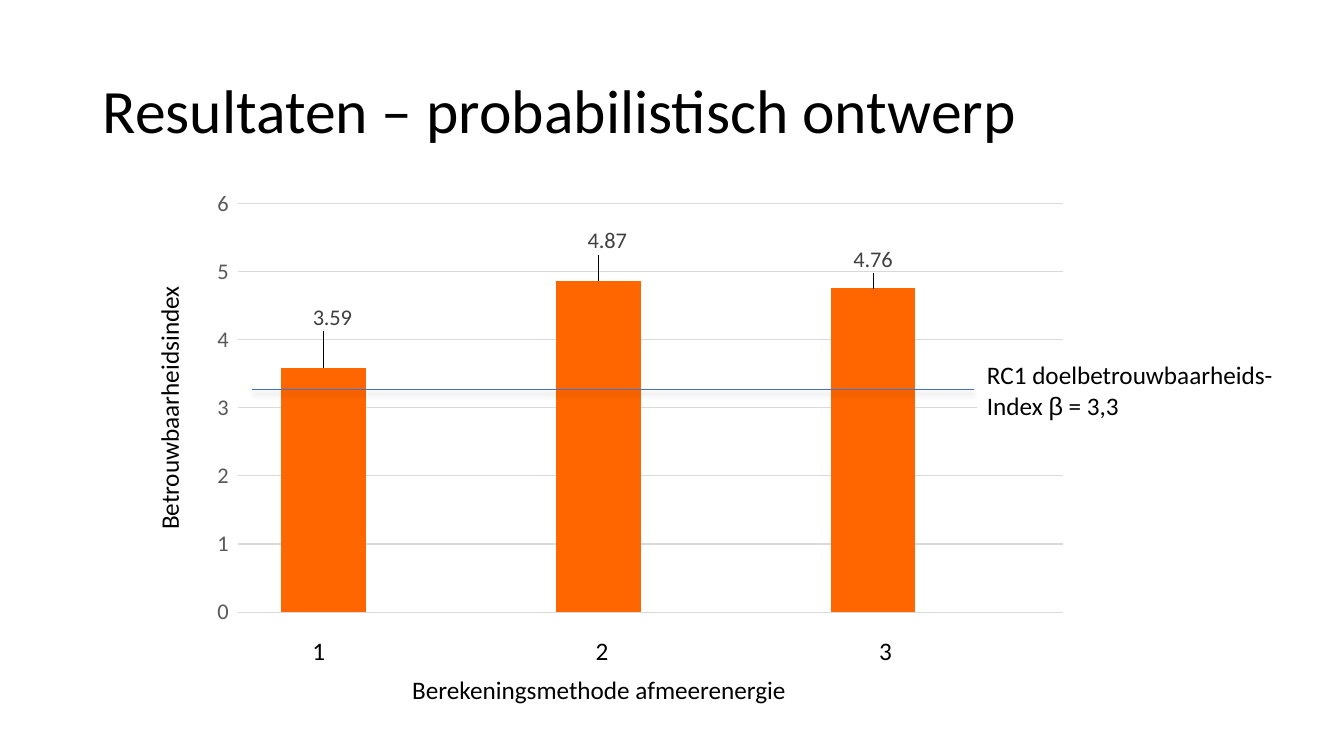
import pptx
import pptx.chart.data
import pptx.dml.color
import pptx.enum.chart
import pptx.enum.shapes
import pptx.enum.text
import pptx.oxml
import pptx.oxml.ns
import pptx.util

Inches = pptx.util.Inches
Pt = pptx.util.Pt
RGBColor = pptx.dml.color.RGBColor

BLACK = RGBColor(0x00, 0x00, 0x00)
WHITE = RGBColor(0xFF, 0xFF, 0xFF)
ORANGE = RGBColor(0xFF, 0x66, 0x00)
BLUE = RGBColor(0x44, 0x72, 0xC4)
GRID_GREY = RGBColor(0xD9, 0xD9, 0xD9)
AXIS_GREY = RGBColor(0x59, 0x59, 0x59)
LABEL_GREY = RGBColor(0x40, 0x40, 0x40)
FONT = "Calibri"

CATEGORIES = ["1", "2", "3"]
INDEXES = [3.59, 4.87, 4.76]
LABEL_SHIFTS = [(0.01, -0.06), (0.01, -0.04), (0.0, -0.02)]


def format_font(font, size, color, name=FONT):
    font.size = Pt(size)
    font.name = name
    font.color.rgb = color


def add_text(slide, paragraphs, left, top, width, height, size=18, color=BLACK,
             wrap=False, anchor=pptx.enum.text.MSO_ANCHOR.TOP, spacing=None,
             rotation=0, fill=None):
    shape = slide.shapes.add_textbox(Inches(left), Inches(top), Inches(width), Inches(height))
    shape.rotation = rotation
    if fill is not None:
        shape.fill.solid()
        shape.fill.fore_color.rgb = fill
    frame = shape.text_frame
    frame.word_wrap = wrap
    frame.vertical_anchor = anchor
    if not wrap:
        frame.auto_size = pptx.enum.text.MSO_AUTO_SIZE.SHAPE_TO_FIT_TEXT
    for number, runs in enumerate(paragraphs):
        paragraph = frame.add_paragraph() if number else frame.paragraphs[0]
        if spacing:
            paragraph.line_spacing = spacing
        for text, font_name in runs:
            run = paragraph.add_run()
            run.text = text
            format_font(run.font, size, color, font_name)
    return shape


def make_layout(**values):
    parts = "".join(f'<c:{name} val="{value}"/>' for name, value in values.items())
    return pptx.oxml.parse_xml(
        f'<c:layout {pptx.oxml.ns.nsdecls("c")}><c:manualLayout>{parts}'
        '</c:manualLayout></c:layout>')


def add_title(slide, left, top, width, height):
    add_text(slide, [[("Resultaten – probabilistisch ontwerp", FONT)]],
             left, top, width, height, size=44, wrap=True, spacing=0.9,
             anchor=pptx.enum.text.MSO_ANCHOR.MIDDLE)


def add_index_chart(slide, left, top, width, height):
    data = pptx.chart.data.CategoryChartData()
    data.categories = CATEGORIES
    data.add_series("Series 1", INDEXES)
    data.add_series("Series 2", [None] * len(CATEGORIES))
    chart = slide.shapes.add_chart(
        pptx.enum.chart.XL_CHART_TYPE.COLUMN_CLUSTERED,
        Inches(left), Inches(top), Inches(width), Inches(height), data).chart
    chart.has_legend = False
    chart.has_title = False
    format_font(chart.font, 16, BLACK)

    plot_area = chart.plots[0]._element.getparent()
    for layout in plot_area.xpath("./c:layout"):
        plot_area.remove(layout)
    plot_area.insert(0, make_layout(layoutTarget="inner", xMode="edge", yMode="edge",
                                    x=0.086, y=0.032, w=0.897, h=0.753))

    chart.category_axis.visible = False
    axis = chart.value_axis
    axis.minimum_scale = 0
    axis.maximum_scale = 6
    axis.major_unit = 1
    axis.format.line.fill.background()
    axis.major_gridlines.format.line.color.rgb = GRID_GREY
    axis.major_gridlines.format.line.width = Pt(0.75)
    format_font(axis.tick_labels.font, 16, AXIS_GREY)

    plot = chart.plots[0]
    plot.vary_by_categories = False
    plot.gap_width = 100
    plot.overlap = -24
    for series in plot.series:
        series.format.fill.solid()
        series.format.fill.fore_color.rgb = ORANGE
        series.data_labels.show_value = True
        format_font(series.data_labels.font, 16, LABEL_GREY)

    bars = plot.series[0]
    for number in range(len(INDEXES)):
        label = bars.points[number].data_label
        format_font(label.font, 16, LABEL_GREY)
        label.position = pptx.enum.chart.XL_LABEL_POSITION.OUTSIDE_END
    for element, (x, y) in zip(bars._element.xpath(".//c:dLbl"), LABEL_SHIFTS):
        element[0].addnext(make_layout(x=x, y=y))


def add_axis_texts(slide, left, top):
    add_text(slide, [[("Betrouwbaarheidsindex", FONT)]],
             left - 1.23, top + 1.98, 2.65, 0.4, rotation=270)
    for number, category in enumerate(CATEGORIES):
        add_text(slide, [[(category, FONT)]],
                 left + 1.42 + 2.81 * number, top + 4.4, 0.33, 0.4)
    add_text(slide, [[("Berekeningsmethode afmeerenergie", FONT)]],
             left + 2.41, top + 4.79, 3.95, 0.4)


def add_target(slide, left, top, line_width):
    line = slide.shapes.add_connector(
        pptx.enum.shapes.MSO_CONNECTOR.STRAIGHT,
        Inches(left), Inches(top), Inches(left + line_width), Inches(top))
    line.line.color.rgb = BLUE
    line.line.width = Pt(0.5)
    line._element.spPr.append(pptx.oxml.parse_xml(
        f'<a:effectLst {pptx.oxml.ns.nsdecls("a")}>'
        f'<a:outerShdw blurRad="{Pt(4)}" dist="{Pt(3)}" dir="5400000" rotWithShape="0">'
        '<a:srgbClr val="000000"><a:alpha val="40000"/></a:srgbClr>'
        '</a:outerShdw></a:effectLst>'))
    add_text(slide,
             [[("RC1 doelbetrouwbaarheids-", FONT)],
              [("Index ", FONT), ("β", "Arial"), (" = 3,3", FONT)]],
             left + line_width + 0.03, top - 0.34, 3.09, 0.71, fill=WHITE)


def main():
    presentation = pptx.Presentation()
    presentation.slide_width = Inches(13.33)
    presentation.slide_height = Inches(7.5)
    slide = presentation.slides.add_slide(presentation.slide_layouts[6])
    add_title(slide, 0.92, 0.4, 11.5, 1.45)
    add_index_chart(slide, 1.58, 1.85, 9.12, 5.38)
    add_axis_texts(slide, 1.58, 1.85)
    add_target(slide, 2.5, 3.86, 7.16)
    presentation.save("out.pptx")


if __name__ == "__main__":
    main()
